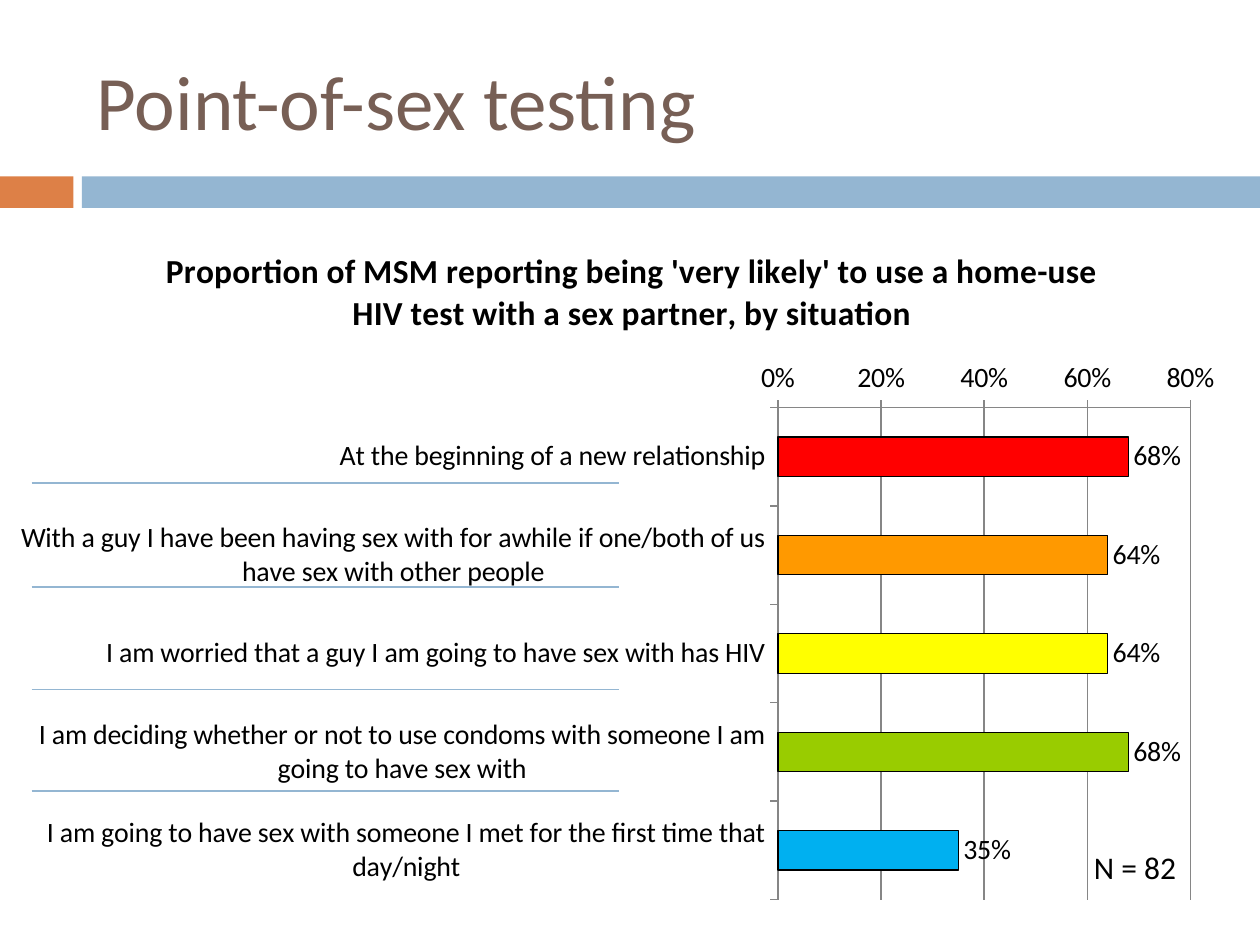
"""Build the slide on point-of-sex testing with its bar chart."""
import pptx
import pptx.chart.data
import pptx.dml.color
import pptx.enum.chart
import pptx.enum.shapes
import pptx.enum.text
import pptx.oxml
import pptx.oxml.ns
import pptx.util
from lxml import etree

Pt = pptx.util.Pt
enum = pptx.enum.chart
qn = pptx.oxml.ns.qn
HUES = {"title": "775F55", "accent": "DD8047", "band": "94B6D2",
        "text": "000000", "grid": "868686"}
BARS = [
    ("At the beginning of a new relationship", 0.68, "FF0000"),
    ("With a guy I have been having sex with for awhile if one/both of us "
     "have sex with other people", 0.64, "FF9900"),
    ("I am worried that a guy I am going to have sex with has HIV", 0.64, "FFFF00"),
    ("I am deciding whether or not to use condoms with someone I am going "
     "to have sex with", 0.68, "99CC00"),
    ("I am going to have sex with someone I met for the first time that "
     "day/night", 0.35, "00B0F0"),
]


def color(hue):
    return pptx.dml.color.RGBColor.from_string(hue)


def write(frame, text, size, hue, bold=False):
    run = frame.paragraphs[0].add_run()
    run.text = text
    font = run.font
    font.name, font.size, font.bold = "Calibri", Pt(size), bold
    font.color.rgb = color(hue)


deck = pptx.Presentation()
deck.slide_width, deck.slide_height = Pt(720), Pt(540)
slide = deck.slides.add_slide(deck.slide_layouts[5])
shapes = slide.shapes

for left, width, hue in [(0, 42, "accent"), (46.8, 673.2, "band")]:
    band = shapes.add_shape(pptx.enum.shapes.MSO_SHAPE.RECTANGLE,
                            Pt(left), Pt(100.8), Pt(width), Pt(18))
    band.shadow.inherit = False
    band.fill.solid()
    band.fill.fore_color.rgb = color(HUES[hue])
    band.line.fill.background()

title = shapes.title
title.left, title.top, title.width, title.height = Pt(48), Pt(18), Pt(642), Pt(78)
title.text_frame.vertical_anchor = pptx.enum.text.MSO_ANCHOR.MIDDLE
write(title.text_frame, "Point-of-sex testing", 44, HUES["title"])
title.text_frame.paragraphs[0].alignment = pptx.enum.text.PP_ALIGN.LEFT

data = pptx.chart.data.CategoryChartData(number_format="0%")
data.categories = [name for name, value, hue in BARS]
data.add_series("Series 1", [value for name, value, hue in BARS])
chart = shapes.add_chart(enum.XL_CHART_TYPE.BAR_CLUSTERED, Pt(12), Pt(126),
                         Pt(696), Pt(396), data).chart
chart.has_legend = False
chart.font.name, chart.font.size = "Calibri", Pt(16)
chart.font.color.rgb = color(HUES["text"])
chart.has_title = True
write(chart.chart_title.text_frame,
      "Proportion of MSM reporting being 'very likely' to use a home-use "
      "HIV test with a sex partner, by situation", 19.2, HUES["text"], True)

cats, vals = chart.category_axis, chart.value_axis
cats.reverse_order = True
vals.minimum_scale, vals.maximum_scale, vals.major_unit = 0, 0.8, 0.2
vals.has_major_gridlines = True
vals.tick_labels.number_format = "0%"
vals.tick_labels.number_format_is_linked = False
for axis in (cats, vals):
    axis.major_tick_mark = enum.XL_TICK_MARK.OUTSIDE
    axis.format.line.color.rgb = color(HUES["grid"])
    axis.format.line.width = Pt(0.75)
grid = vals.major_gridlines.format.line
grid.color.rgb = color(HUES["grid"])
grid.width = Pt(0.75)

plot = chart.plots[0]
plot.gap_width = 150
plot.vary_by_categories = False
plot.has_data_labels = True
labels = plot.data_labels
labels.show_value = True
labels.number_format, labels.number_format_is_linked = "0%", False
labels.position = enum.XL_LABEL_POSITION.OUTSIDE_END
series = plot.series[0]
series.format.fill.solid()
series.format.fill.fore_color.rgb = color(HUES["band"])
for i, (name, value, hue) in enumerate(BARS):
    style = series.points[i].format
    style.fill.solid()
    style.fill.fore_color.rgb = color(hue)
    style.line.color.rgb = color(HUES["text"])
    style.line.width = Pt(0.75)

area = chart.element.find(".//" + qn("c:plotArea"))
for old in area.findall(qn("c:layout")):
    area.remove(old)
layout = etree.Element(qn("c:layout"))
manual = etree.SubElement(layout, qn("c:manualLayout"))
for tag, value in [("layoutTarget", "inner"), ("xMode", "edge"), ("yMode", "edge"),
                   ("x", "0.62"), ("y", "0.27"), ("w", "0.34"), ("h", "0.71")]:
    etree.SubElement(manual, qn("c:" + tag)).set("val", value)
area.insert(0, layout)

for top in (276, 335.5, 394, 452):
    rule = shapes.add_connector(pptx.enum.shapes.MSO_CONNECTOR.STRAIGHT,
                                Pt(18), Pt(top), Pt(354), Pt(top))
    rule.line.color.rgb = color(HUES["band"])
    rule.line.width = Pt(0.79)
    etree.SubElement(rule.element.spPr, qn("a:effectLst"))

note = shapes.add_textbox(Pt(618), Pt(481), Pt(66), Pt(29)).text_frame
note.word_wrap = True
note.auto_size = pptx.enum.text.MSO_AUTO_SIZE.SHAPE_TO_FIT_TEXT
write(note, "N = 82", 18, HUES["text"])

deck.save("out.pptx")
